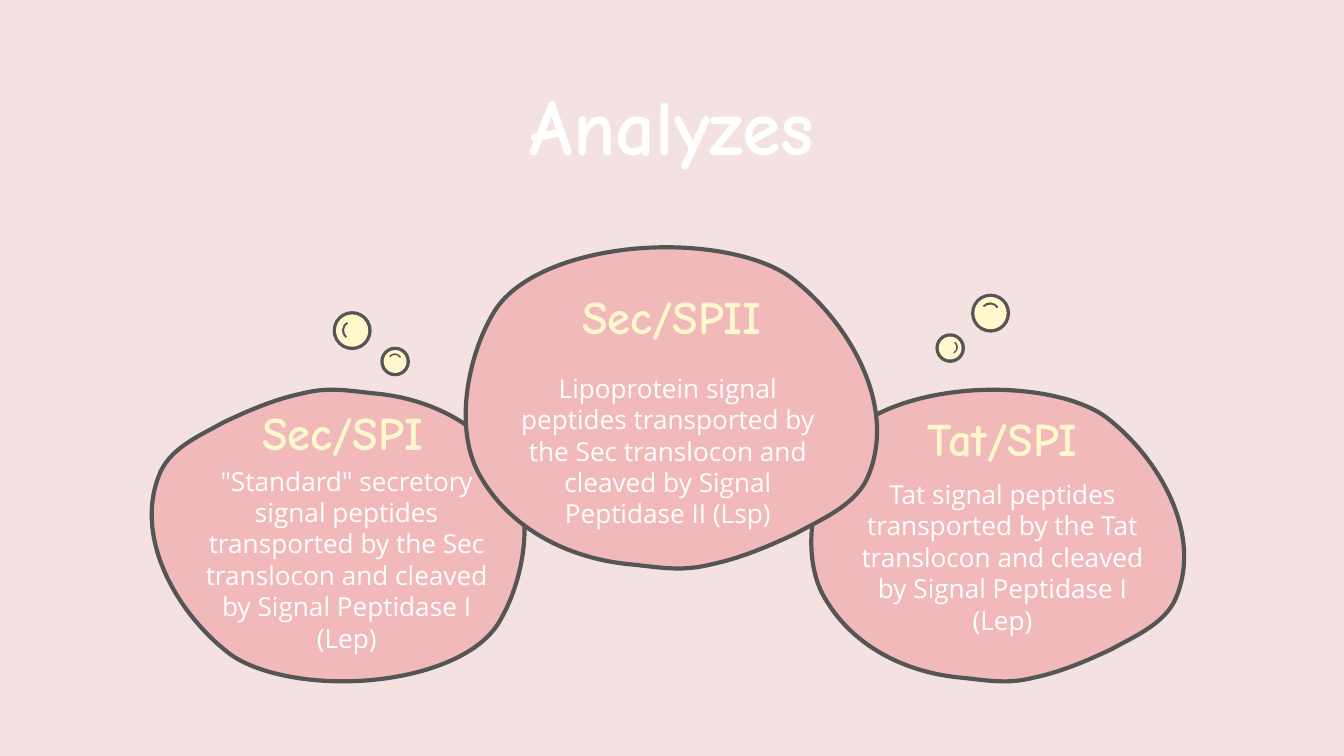
from pptx import Presentation
from pptx.dml.color import RGBColor
from pptx.enum.shapes import MSO_SHAPE
from pptx.enum.text import MSO_ANCHOR, PP_ALIGN
from pptx.oxml.ns import qn
from pptx.util import Inches, Pt

BACKGROUND = RGBColor(0xF4, 0xE2, 0xE2)
PINK = RGBColor(0xF1, 0xB9, 0xB9)
CREAM = RGBColor(0xFF, 0xF8, 0xCD)
GRAY = RGBColor(0x55, 0x55, 0x55)
WHITE = RGBColor(0xFF, 0xFF, 0xFF)

HEADING_FONT = "Comic Neue"
BODY_FONT = "Open Sans"

# Outlines: a start point, then two control points and an end point per curve.
PEBBLE_SIZE = (3, 2.17)
PEBBLE = [
    (1.49, 0),
    (1.41, 0), (1.34, 0.01), (1.26, 0.03),
    (1.07, 0.07), (0.88, 0.15), (0.69, 0.24),
    (0.53, 0.33), (0.31, 0.42), (0.22, 0.6),
    (0, 1.08), (0.33, 1.65), (0.71, 1.95),
    (0.88, 2.09), (1.22, 2.17), (1.57, 2.17),
    (2.05, 2.17), (2.57, 2.02), (2.74, 1.72),
    (2.91, 1.43), (3, 0.96), (2.84, 0.65),
    (2.63, 0.26), (2.22, 0.07), (1.83, 0.03),
    (1.72, 0.02), (1.6, 0), (1.49, 0),
]
GLINT_SIZE = (12, 5)
GLINT = [
    (0, 3),
    (3, -1), (9, -1), (12, 4),
    (12, 5), (11, 5), (11, 5),
    (9, 1), (4, 1), (1, 4),
    (0, 4), (0, 3), (0, 3),
]

# Heading, heading box, text, text box, pebble box, pebble rotation.
TOPICS = [
    ("Tat/SPI", (6.19, 2.95, 2.54, 1),
     "Tat signal peptides transported by the Tat translocon and cleaved by "
     "Signal Peptidase I (Lep)", (6.26, 3.46, 2.4, 0.91),
     (5.96, 2.9, 3, 2.17), 180),
    ("Sec/SPI", (1.28, 2.9, 2.54, 0.63),
     "\"Standard\" secretory signal peptides transported by the Sec translocon "
     "and cleaved by Signal Peptidase I (Lep)", (1.42, 3.36, 2.32, 0.91),
     (0.98, 2.9, 3, 2.17), 0),
    ("Sec/SPII", (3.98, 2.04, 2.04, 1.1),
     "Lipoprotein signal peptides transported by the Sec translocon and "
     "cleaved by Signal Peptidase II (Lsp)", (3.64, 2.67, 2.66, 0.63),
     (3.38, 1.84, 3.31, 2.39), 180),
]

# Centre, diameter and the direction in which the glint lies.
UP, LEFT, RIGHT = (0, -1), (-1, 0), (1, 0)
GLINT_ROTATION = {UP: 0, LEFT: 270, RIGHT: 90}
BUBBLE_PAIRS = [
    [(7.07, 2.59, 0.22, RIGHT), (7.37, 2.33, 0.29, UP)],
    [(2.94, 2.69, 0.22, UP), (2.62, 2.46, 0.29, LEFT)],
]


def paint(shape, fill, line=None):
    shape.shadow.inherit = False
    shape.fill.solid()
    shape.fill.fore_color.rgb = fill
    if line is None:
        shape.line.fill.background()
    else:
        shape.line.color.rgb = line
        shape.line.width = Pt(2.25)


def add_curved_shape(shapes, outline, outline_size, box):
    """Draw the outline scaled to the box, with every three points as one curve."""
    left, top, width, height = box
    scale_x, scale_y = width / outline_size[0], height / outline_size[1]
    points = [(Inches(left + x * scale_x), Inches(top + y * scale_y))
              for x, y in outline]
    builder = shapes.build_freeform(*points[0])
    builder.add_line_segments(points[1:], close=True)
    shape = builder.convert_to_shape()
    segments = list(shape.element.iter(qn("a:lnTo")))
    for index in range(0, len(segments), 3):
        first, *others = segments[index:index + 3]
        curve = first.makeelement(qn("a:cubicBezTo"), {})
        first.addprevious(curve)
        for segment in (first, *others):
            curve.append(segment[0])
            segment.getparent().remove(segment)
    return shape


def format_text(shape, text, font_name, size, color, bold=False,
                anchor=MSO_ANCHOR.TOP):
    frame = shape.text_frame
    frame.word_wrap = True
    frame.vertical_anchor = anchor
    frame.margin_left = frame.margin_right = Inches(0.1)
    frame.margin_top = frame.margin_bottom = Inches(0.1)
    frame.text = text
    paragraph = frame.paragraphs[0]
    paragraph.alignment = PP_ALIGN.CENTER
    font = paragraph.runs[0].font
    font.name, font.size, font.bold = font_name, Pt(size), bold
    font.color.rgb = color
    return paragraph


def add_title(slide, box):
    title = slide.shapes.title
    title.left, title.top, title.width, title.height = map(Inches, box)
    format_text(title, "Analyzes", HEADING_FONT, 42, WHITE, True,
                MSO_ANCHOR.MIDDLE)


def add_pebble(slide, box, rotation):
    pebble = add_curved_shape(slide.shapes, PEBBLE, PEBBLE_SIZE, box)
    pebble.rotation = rotation
    paint(pebble, PINK, GRAY)


def add_topic_text(slide, heading, heading_box, text, text_box):
    anchor = MSO_ANCHOR.MIDDLE if heading == "Sec/SPI" else MSO_ANCHOR.TOP
    heading_shape = slide.shapes.add_textbox(*map(Inches, heading_box))
    format_text(heading_shape, heading, HEADING_FONT, 25, CREAM, True, anchor)
    text_shape = slide.shapes.add_textbox(*map(Inches, text_box))
    paragraph = format_text(text_shape, text, BODY_FONT, 14, WHITE)
    paragraph.line_spacing = Pt(16.8)
    paragraph.space_after = Pt(16)


def add_bubble(shapes, center_x, center_y, diameter, direction):
    for size, color in ((diameter, GRAY), (diameter - 0.05, CREAM)):
        disc = shapes.add_shape(
            MSO_SHAPE.OVAL, Inches(center_x - size / 2),
            Inches(center_y - size / 2), Inches(size), Inches(size))
        paint(disc, color)
    width, height = 0.4 * diameter, 0.16 * diameter
    glint_x = center_x + 0.2 * diameter * direction[0]
    glint_y = center_y + 0.2 * diameter * direction[1]
    glint = add_curved_shape(
        shapes, GLINT, GLINT_SIZE,
        (glint_x - width / 2, glint_y - height / 2, width, height))
    glint.rotation = GLINT_ROTATION[direction]
    paint(glint, GRAY)


def main():
    presentation = Presentation()
    presentation.slide_width = Inches(10)
    presentation.slide_height = Inches(10 * 9 / 16)
    slide = presentation.slides.add_slide(presentation.slide_layouts[5])
    slide.background.fill.solid()
    slide.background.fill.fore_color.rgb = BACKGROUND

    add_title(slide, (0.75, 0.61, 8.5, 0.63))
    for *_, pebble_box, rotation in TOPICS:
        add_pebble(slide, pebble_box, rotation)
    for pair in BUBBLE_PAIRS:
        group = slide.shapes.add_group_shape()
        for bubble in pair:
            add_bubble(group.shapes, *bubble)
    for heading, heading_box, text, text_box, *_ in TOPICS:
        add_topic_text(slide, heading, heading_box, text, text_box)

    presentation.save("out.pptx")


if __name__ == "__main__":
    main()
